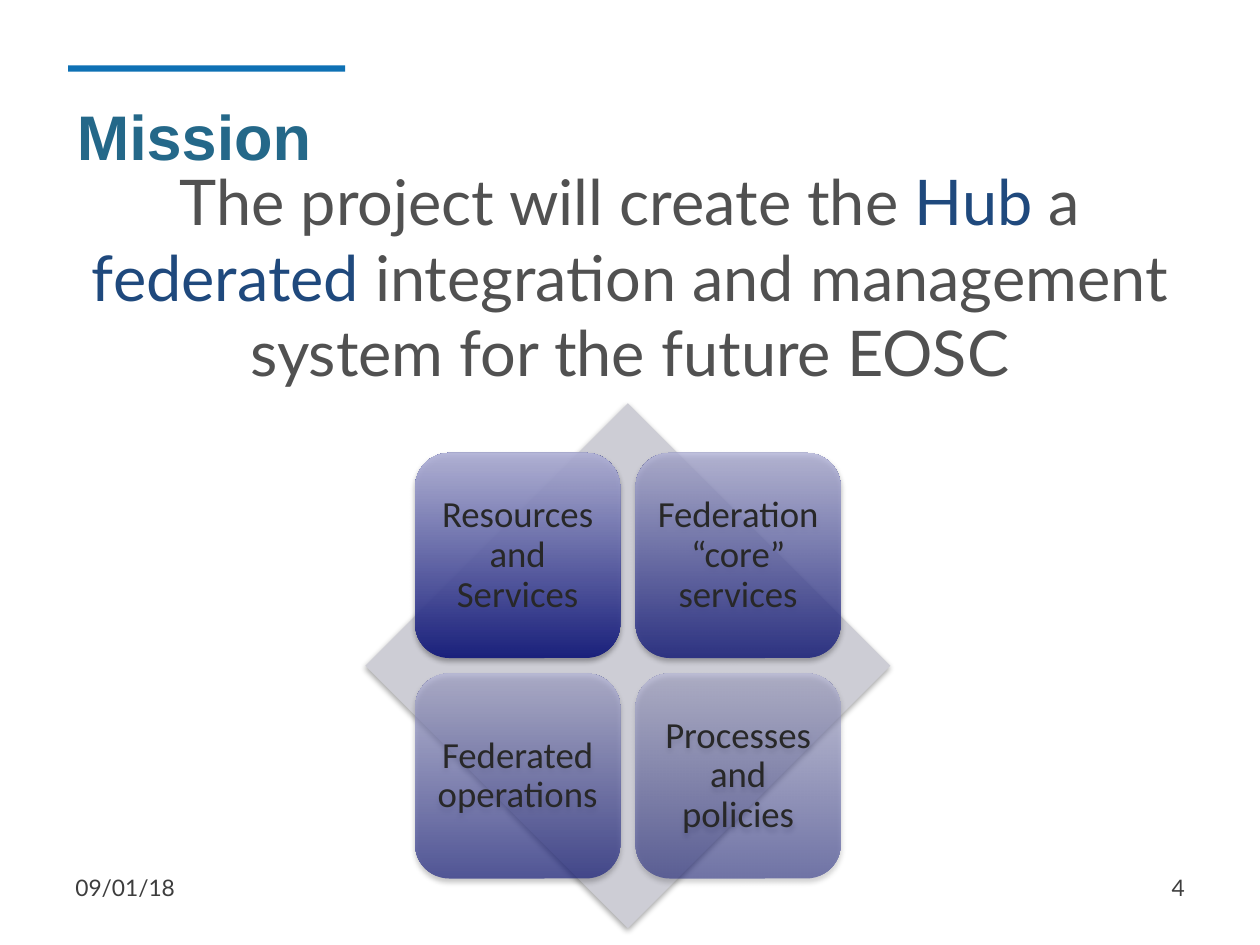
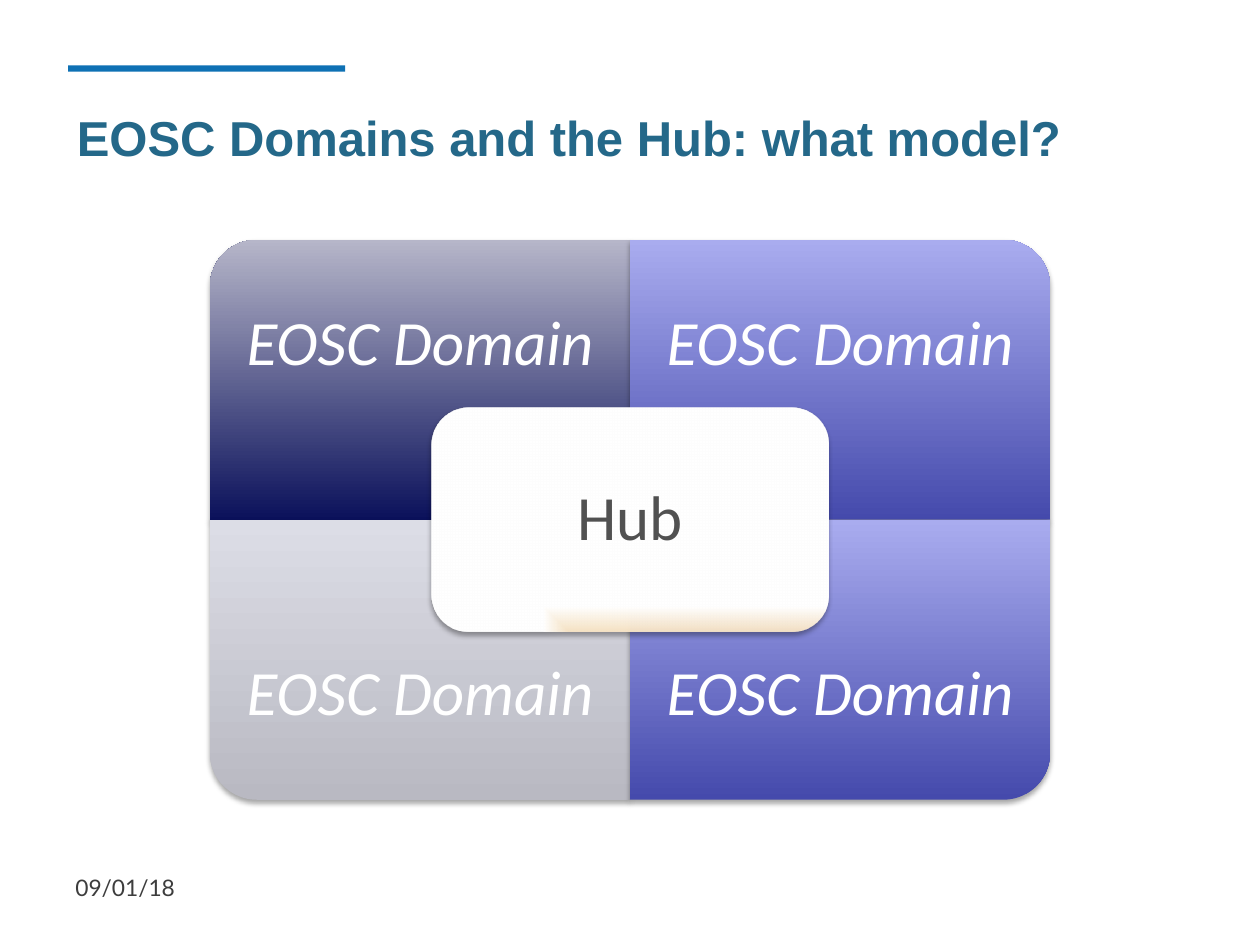
from pptx import Presentation
from pptx.dml.color import RGBColor
from pptx.enum.shapes import MSO_SHAPE
from pptx.enum.text import MSO_ANCHOR, PP_ALIGN
from pptx.oxml import parse_xml
from pptx.oxml.ns import nsdecls, qn
from pptx.util import Pt

# Enum members
LEFT, CENTER, RIGHT = PP_ALIGN.LEFT, PP_ALIGN.CENTER, PP_ALIGN.RIGHT
TOP, MIDDLE = MSO_ANCHOR.TOP, MSO_ANCHOR.MIDDLE
RECTANGLE, DIAMOND = MSO_SHAPE.RECTANGLE, MSO_SHAPE.DIAMOND
ROUNDED = MSO_SHAPE.ROUNDED_RECTANGLE
ONE_ROUND = MSO_SHAPE.ROUND_1_RECTANGLE

# Colours
BAR_BLUE = RGBColor(0x0E, 0x71, 0xB4)
TITLE_TEAL = RGBColor(0x24, 0x68, 0x89)
FOOTER_GREY = RGBColor(0x3D, 0x3D, 0x3D)
BODY_GREY = RGBColor(0x51, 0x51, 0x51)
ACCENT_BLUE = RGBColor(0x1F, 0x49, 0x7D)
TILE_TEXT = RGBColor(0x28, 0x28, 0x28)
WHITE = RGBColor(0xFF, 0xFF, 0xFF)
BLACK = RGBColor(0, 0, 0)
DIAMOND_GREY = RGBColor(0xCD, 0xCD, 0xD5)
TILE_DARK, TILE_LIGHT = RGBColor(0x0F, 0x16, 0x7A), RGBColor(0xAF, 0xB0, 0xD6)
NAVY_DARK, NAVY_LIGHT = RGBColor(0x0B, 0x11, 0x5B), RGBColor(0xB6, 0xB6, 0xC9)
VIOLET_DARK, VIOLET_LIGHT = RGBColor(0x45, 0x4A, 0xAC), RGBColor(0xA9, 0xAC, 0xEF)
SILVER_DARK, SILVER_LIGHT = RGBColor(0xB9, 0xB9, 0xC2), RGBColor(0xDC, 0xDD, 0xE6)
HUB_ORANGE = RGBColor(0xF3, 0x96, 0x05)

# Text styles
TITLE = dict(name="Arial", bold=True, size=Pt(36))
FOOTER = dict(name="Lato", size=Pt(13))
BODY = dict(name="Lato", size=Pt(36))
TILE = dict(name="Calibri", size=Pt(21))
DOMAIN = dict(name="Calibri", size=Pt(36), italic=True)
HUB = dict(name="Calibri", size=Pt(36))

# Gradient directions
UPWARD = '<a:lin ang="16200000" scaled="0"/>'
TO_CORNER = '<a:path path="rect"><a:fillToRect l="100000" t="100000"/></a:path>'


def color_xml(color, opacity):
    return (f'<a:srgbClr val="{color}">'
            f'<a:alpha val="{opacity * 1000}"/></a:srgbClr>')


class SlideBuilder:
    """Holds the deck, its shared style and the current slide."""

    def __init__(self):
        self.deck = Presentation()
        self.deck.slide_width, self.deck.slide_height = Pt(720), Pt(540)
        self.page = None

    def new_page(self, title, top, width, size, number=None):
        self.page = self.deck.slides.add_slide(self.deck.slide_layouts[5])
        self.shape(RECTANGLE, 38.9, 37.4, 158.4, 3.6, BAR_BLUE)
        box = self.page.shapes.title
        box.left, box.top, box.width, box.height = (
            Pt(36.7), Pt(top), Pt(width), Pt(45.4))
        self.fill_text(box, [(title, TITLE_TEAL)], {**TITLE, "size": Pt(size)},
                       margins=(7.2, 6.5, 7.2, 3.6))
        self.text(36, 496, 168, 29, [("09/01/18", FOOTER_GREY)], FOOTER)
        if number:
            self.text(516, 496, 168, 29, [(number, FOOTER_GREY)], FOOTER,
                      align=RIGHT)

    def fill_text(self, box, spans, style, align=LEFT, anchor=TOP,
                  margins=(7.2, 3.6, 7.2, 3.6), spacing=None):
        frame = box.text_frame
        frame.word_wrap = True
        frame.vertical_anchor = anchor
        for side, margin in zip(("left", "top", "right", "bottom"), margins):
            setattr(frame, f"margin_{side}", Pt(margin))
        para = frame.paragraphs[0]
        para.alignment = align
        if spacing:
            para.line_spacing = spacing
        for words, color in spans:
            span = para.add_run()
            span.text = words
            for key, value in style.items():
                setattr(span.font, key, value)
            span.font.color.rgb = color

    def text(self, left, top, width, height, spans, style, **layout):
        box = self.page.shapes.add_textbox(
            Pt(left), Pt(top), Pt(width), Pt(height))
        self.fill_text(box, spans, style, **layout)

    def label(self, box, words, color, style, margin):
        self.fill_text(box, [(words, color)], style, CENTER, MIDDLE,
                       [margin] * 4, spacing=0.9)

    def shape(self, kind, left, top, width, height, color=None):
        box = self.page.shapes.add_shape(
            kind, Pt(left), Pt(top), Pt(width), Pt(height))
        box.shadow.inherit = False
        box.line.fill.background()
        if color is None:
            box.fill.background()
        else:
            box.fill.solid()
            box.fill.fore_color.rgb = color
        return box

    def shadow(self, box):
        effects = box._element.spPr.find(qn("a:effectLst"))
        effects.append(parse_xml(
            f'<a:outerShdw {nsdecls("a")} blurRad="{Pt(3.1)}" '
            f'dist="{Pt(1.8)}" dir="5400000" rotWithShape="0">'
            f'{color_xml(BLACK, 35)}</a:outerShdw>'))

    def gradient_shape(self, kind, left, top, width, height, stops,
                       direction=UPWARD):
        box = self.shape(kind, left, top, width, height)
        stops_xml = "".join(
            f'<a:gs pos="{place * 1000}">{color_xml(color, opacity)}</a:gs>'
            for place, color, opacity in stops)
        properties = box._element.spPr
        properties.replace(properties.find(qn("a:noFill")), parse_xml(
            f'<a:gradFill {nsdecls("a")} rotWithShape="0">'
            f'<a:gsLst>{stops_xml}</a:gsLst>{direction}</a:gradFill>'))
        self.shadow(box)
        return box


def build_mission(builder):
    builder.new_page("Mission", 49, 430.6, 36, number="4")
    builder.text(36, 89.3, 648, 356.4, [
        ("The project will create the ", BODY_GREY),
        ("Hub ", ACCENT_BLUE),
        ("a ", BODY_GREY),
        ("federated", ACCENT_BLUE),
        (" integration and management system for the future EOSC", BODY_GREY),
    ], BODY, align=CENTER)

    # Diamond behind a two by two grid of tiles
    center_x, center_y, half = 358.8, 380.4, 150
    diamond = builder.shape(DIAMOND, center_x - half, center_y - half,
                            2 * half, 2 * half, DIAMOND_GREY)
    builder.shadow(diamond)
    side, gap = 117.2, 8.8
    tiles = [("Resources and Services", 90), ("Federation “core” services", 77),
             ("Federated operations", 63), ("Processes and policies", 50)]
    for index, (words, opacity) in enumerate(tiles):
        row, column = divmod(index, 2)
        tile = builder.gradient_shape(
            ROUNDED,
            center_x - side - gap / 2 + column * (side + gap),
            center_y - side - gap / 2 + row * (side + gap),
            side, side,
            [(0, TILE_DARK, opacity), (100, TILE_LIGHT, opacity)])
        builder.label(tile, words, TILE_TEXT, TILE, 6.5)


def build_domains(builder):
    builder.new_page("EOSC Domains and the Hub: what model?", 54.7, 607, 28)

    # Four domains, each turned so that its round corner points outwards
    center_x, center_y, width, height, label_height = 360, 297, 240, 160, 120
    domains = [(270, NAVY_DARK, NAVY_LIGHT), (0, VIOLET_DARK, VIOLET_LIGHT),
               (180, SILVER_DARK, SILVER_LIGHT), (90, VIOLET_DARK, VIOLET_LIGHT)]
    for index, (turn, dark, light) in enumerate(domains):
        row, column = divmod(index, 2)
        left = center_x + (column - 1) * width
        top = center_y + (row - 1) * height
        across, down = (height, width) if turn % 180 else (width, height)
        domain = builder.gradient_shape(
            ONE_ROUND, left + (width - across) / 2, top + (height - down) / 2,
            across, down, [(0, dark, 100), (100, light, 100)])
        domain.rotation = turn
        builder.text(left, top + row * (height - label_height), width,
                     label_height, [("EOSC Domain", WHITE)], DOMAIN,
                     align=CENTER, anchor=MIDDLE, margins=[20] * 4,
                     spacing=0.9)

    # Hub over the middle
    hub_width, hub_height = 227, 128
    hub = builder.gradient_shape(
        ROUNDED, center_x - hub_width / 2, center_y - hub_height / 2,
        hub_width, hub_height,
        [(0, HUB_ORANGE, 70), (100, WHITE, 100)], TO_CORNER)
    builder.label(hub, "Hub", BODY_GREY, HUB, 10.8)


def main():
    builder = SlideBuilder()
    build_mission(builder)
    build_domains(builder)
    builder.deck.save("out.pptx")


if __name__ == "__main__":
    main()
